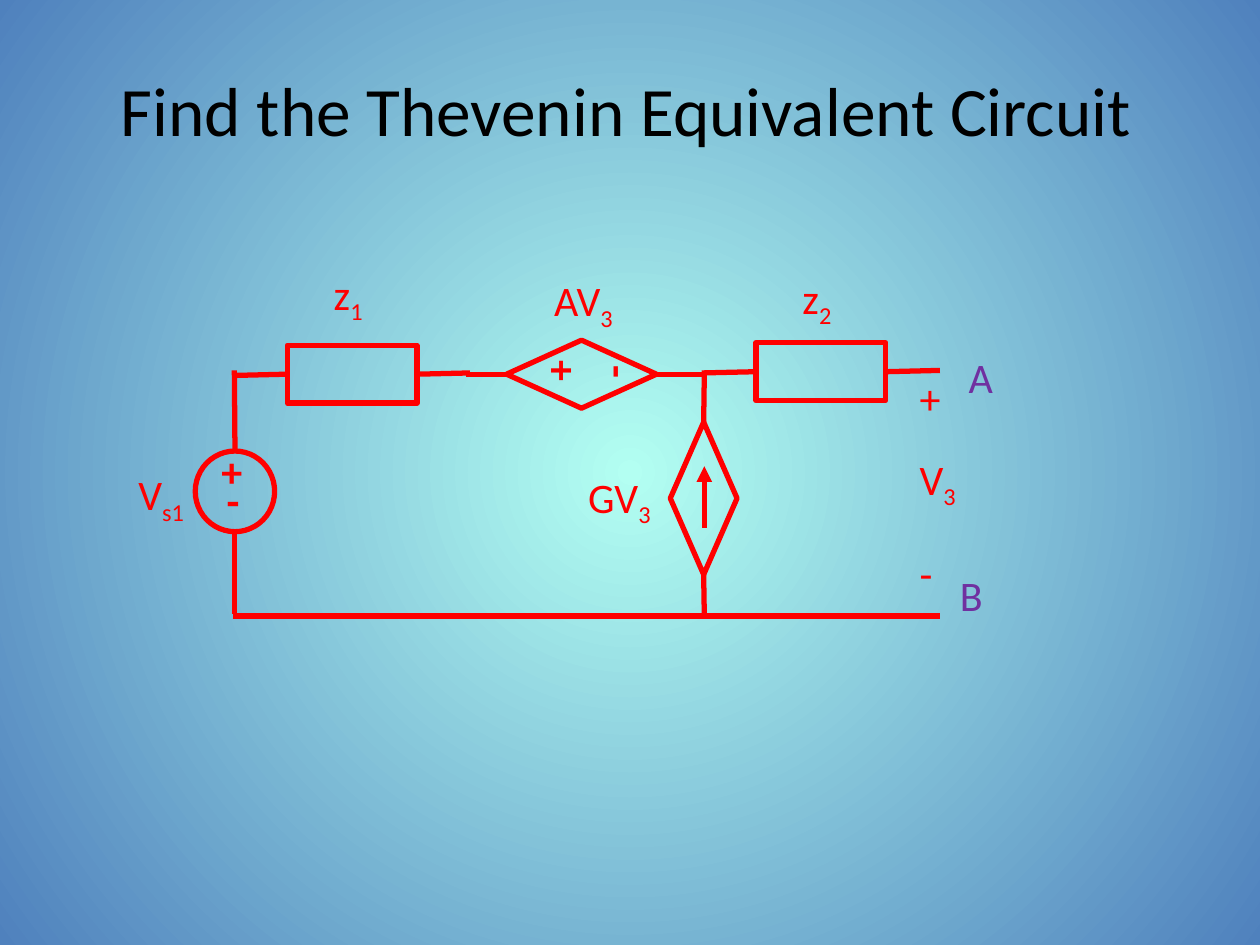
from pptx import Presentation, oxml, util as u
from pptx.dml.color import RGBColor
from pptx.enum import shapes, text
from pptx.oxml import ns
from lxml import etree

COLORS = {"circuit": "FF0000", "terminal": "7030A0", "title": "000000",
          "glow": "B3FFF2", "edge": "4F81BD"}

deck = Presentation()
deck.slide_width, deck.slide_height = u.Inches(10), u.Inches(7.5)
page = deck.slides.add_slide(deck.slide_layouts[6])

# Radial background
background = oxml.parse_xml(f"""
<p:bg {ns.nsdecls('p', 'a')}><p:bgPr><a:gradFill rotWithShape="1"><a:gsLst>
<a:gs pos="0"><a:srgbClr val="{COLORS['glow']}"/></a:gs>
<a:gs pos="100000"><a:srgbClr val="{COLORS['edge']}"/></a:gs></a:gsLst>
<a:path path="circle"><a:fillToRect l="50000" t="50000" r="50000" b="50000"/></a:path>
</a:gradFill><a:effectLst/></p:bgPr></p:bg>""")
page.shapes._spTree.getparent().insert(0, background)


def add_text(place, lines, size=24, color="circuit", bold=False, wrap=False,
             turn=0, align=text.PP_ALIGN.LEFT, anchor=text.MSO_ANCHOR.TOP,
             spacing=None, gap=0):
    """Write lines of text; an underscore starts a subscript."""
    box = page.shapes.add_textbox(*map(u.Inches, place))
    box.rotation = turn
    frame = box.text_frame
    frame.word_wrap = wrap
    frame.vertical_anchor = anchor
    for index, line in enumerate(lines):
        para = frame.paragraphs[0] if index == 0 else frame.add_paragraph()
        para.alignment = align
        if spacing:
            para.line_spacing = u.Pt(spacing)
        if index:
            para.space_before = u.Pt(gap)
        for level, part in enumerate(line.split("_")):
            span = para.add_run()
            span.text = part
            span.font.name = "Calibri"
            span.font.size = u.Pt(size)
            span.font.bold = bold
            span.font.color.rgb = RGBColor.from_string(COLORS[color])
            if level:
                span._r.get_or_add_rPr().set("baseline", "-25000")


def add_wire(start, end, source=None, target=None, arrow=False):
    """Draw a line; source and target are (shape, side) pairs to join."""
    wire = page.shapes.add_connector(shapes.MSO_CONNECTOR.STRAIGHT,
                                     *map(u.Inches, start + end))
    wire.line.width = u.Pt(3)
    wire.line.color.rgb = RGBColor.from_string(COLORS["circuit"])
    if source:
        wire.begin_connect(*source)
    if target:
        wire.end_connect(*target)
    if arrow:
        etree.SubElement(wire.line._get_or_add_ln(), ns.qn("a:tailEnd"), type="triangle")
    etree.SubElement(wire._element.spPr, ns.qn("a:effectLst"))


add_text((0.47, 0.09, 9, 1.54), ["Find the Thevenin Equivalent Circuit"], size=39.6,
         color="title", wrap=True, align=text.PP_ALIGN.CENTER,
         anchor=text.MSO_ANCHOR.MIDDLE)

# Components
kinds = shapes.MSO_SHAPE
components = {}
for name, kind, place in [
    ("z1", kinds.RECTANGLE, (2.28, 2.74, 1.03, 0.46)),
    ("z2", kinds.RECTANGLE, (6, 2.72, 1.03, 0.46)),
    ("voltage gain", kinds.DIAMOND, (4.02, 2.7, 1.19, 0.54)),
    ("current gain", kinds.DIAMOND, (5.32, 3.35, 0.53, 1.21)),
    ("source", kinds.OVAL, (1.55, 3.58, 0.63, 0.64)),
]:
    shape = page.shapes.add_shape(kind, *map(u.Inches, place))
    shape.shadow.inherit = False
    shape.fill.background()
    shape.line.width = u.Pt(3)
    shape.line.color.rgb = RGBColor.from_string(COLORS["circuit"])
    components[name] = shape

# Wires
TOP, LEFT, BOTTOM, RIGHT = range(4)
z1, z2, voltage_gain, current_gain, source = components.values()
add_wire((1.86, 2.94), (1.86, 3.58), target=(source, TOP))
add_wire((1.86, 4.22), (1.86, 4.87))
add_wire((1.85, 2.98), (2.28, 2.97), target=(z1, LEFT))
add_wire((3.31, 2.97), (3.73, 2.96), source=(z1, RIGHT))
add_wire((3.7, 2.97), (4.02, 2.97), target=(voltage_gain, LEFT))
add_wire((5.21, 2.97), (5.59, 2.97), source=(voltage_gain, RIGHT))
add_wire((5.57, 2.96), (6, 2.95), target=(z2, LEFT))
add_wire((7.03, 2.95), (7.46, 2.94), source=(z2, RIGHT))
add_wire((5.59, 2.97), (5.59, 3.35), target=(current_gain, TOP))
add_wire((5.59, 4.56), (5.59, 4.89), source=(current_gain, BOTTOM))
add_wire((5.59, 4.19), (5.59, 3.7), arrow=True)
add_wire((1.85, 4.89), (7.46, 4.89))

# Polarity signs
for sign, place, turn in [
    ("+", (4.23, 2.67, 0.41, 0.59), 90),
    ("-", (4.71, 2.68, 0.34, 0.59), 90),
    ("+", (1.66, 3.49, 0.4, 0.55), 0),
    ("-", (1.7, 3.72, 0.33, 0.55), 0),
]:
    add_text(place, [sign], bold=True, turn=turn)

# Labels
for label, place in [
    ("V_s1", (1, 3.67, 0.63, 0.55)),
    ("z_1", (2.55, 2.08, 0.48, 0.55)),
    ("z_2", (6.27, 2.11, 0.48, 0.55)),
    ("AV_3", (4.3, 2.13, 0.74, 0.55)),
    ("GV_3", (4.57, 3.69, 0.77, 0.55)),
]:
    add_text(place, [label])
add_text((7.2, 2.96, 0.55, 2.04), ["+", "V_3", "-"], spacing=25, gap=25)
add_text((7.59, 2.74, 0.4, 0.5), ["A"], color="terminal")
add_text((7.52, 4.47, 0.4, 0.5), ["B"], color="terminal")

deck.save("out.pptx")
